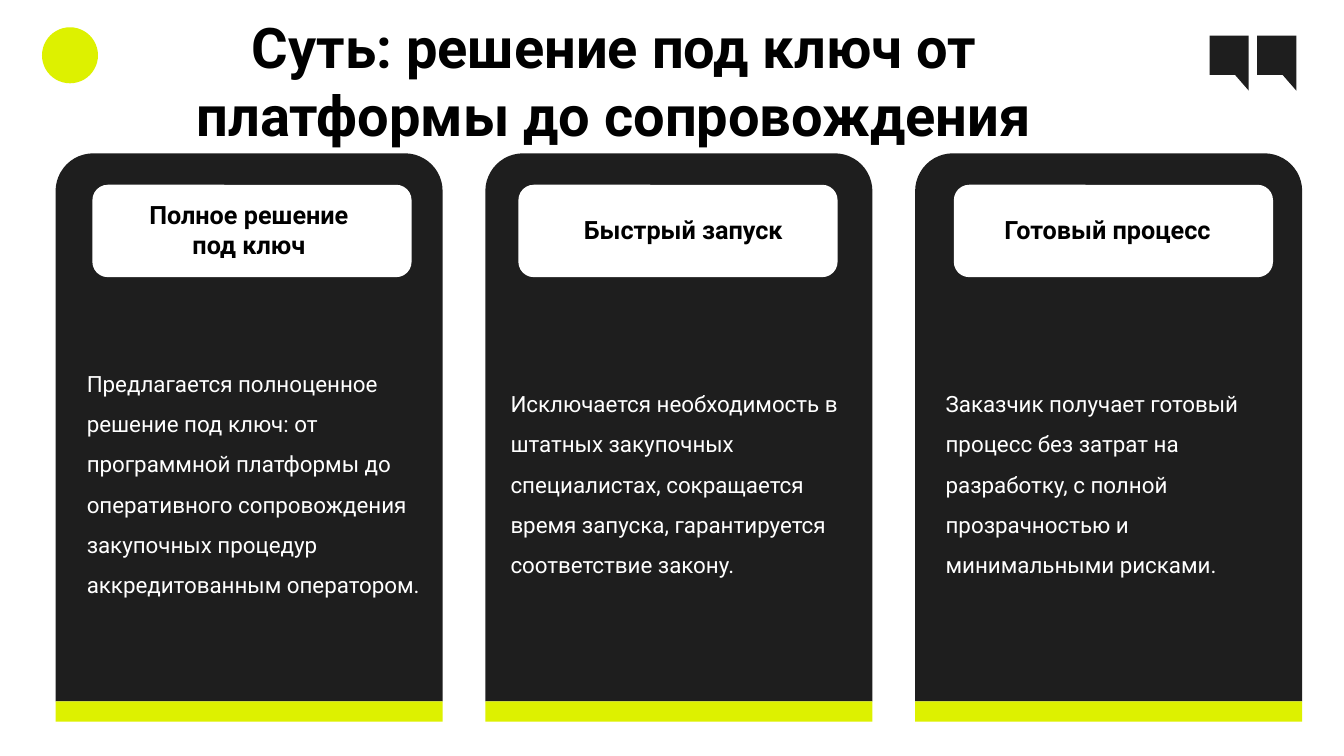
from dataclasses import dataclass

from pptx import Presentation
from pptx.dml.color import RGBColor
from pptx.enum.shapes import MSO_SHAPE
from pptx.enum.text import MSO_ANCHOR, MSO_AUTO_SIZE, PP_ALIGN
from pptx.util import Pt

OVAL = MSO_SHAPE.OVAL
RECT = MSO_SHAPE.RECTANGLE
ROUND = MSO_SHAPE.ROUNDED_RECTANGLE
DOME = MSO_SHAPE.ROUND_2_SAME_RECTANGLE
MIDDLE = MSO_ANCHOR.MIDDLE
GROW = MSO_AUTO_SIZE.SHAPE_TO_FIT_TEXT
LEFT = PP_ALIGN.LEFT
CENTER = PP_ALIGN.CENTER


@dataclass(frozen=True)
class Theme:
    font: str = "Roboto"
    lime: str = "DDF100"
    dark: str = "1E1E1E"
    white: str = "FFFFFF"
    black: str = "000000"
    title: int = 40
    label: int = 18
    body: int = 16


class Board:
    def __init__(self, slide, theme):
        self.slide = slide
        self.theme = theme

    def paint(self, shape, color):
        shape.shadow.inherit = False
        shape.fill.solid()
        shape.fill.fore_color.rgb = RGBColor.from_string(color)
        shape.line.fill.background()

    def block(self, kind, box, color, radius=None):
        shape = self.slide.shapes.add_shape(kind, *map(Pt, box))
        if radius is not None:
            shape.adjustments[0] = radius / min(box[2:])
        self.paint(shape, color)

    def quote(self, left, top):
        form = self.slide.shapes.build_freeform(Pt(left), Pt(top))
        corners = [(28, 0), (28, 39.2), (18.2, 28), (0, 28)]
        form.add_line_segments([(Pt(left + x), Pt(top + y)) for x, y in corners])
        self.paint(form.convert_to_shape(), self.theme.dark)

    def text(self, words, box, size, color, bold=False, align=CENTER, space=1.0):
        frame = self.slide.shapes.add_textbox(*map(Pt, box)).text_frame
        frame.word_wrap = True
        frame.auto_size = GROW
        frame.vertical_anchor = MIDDLE
        line = frame.paragraphs[0]
        line.alignment = align
        line.line_spacing = space
        run = line.add_run()
        run.text = words
        font = run.font
        font.name = self.theme.font
        font.size = Pt(size)
        font.bold = bold
        font.color.rgb = RGBColor.from_string(color)

    def card(self, left, tag_left, label_left, body_left, label, body):
        look = self.theme
        self.block(DOME, (left, 109.5, 276.5, 391.5), look.dark, 27)
        self.block(RECT, (left, 501, 276.5, 14.5), look.lime)
        self.block(ROUND, (tag_left, 132, 228, 66), look.white, 11)
        self.text(label, (label_left, 138.2, 172.8, 51), look.label, look.black, bold=True)
        self.text(body, (body_left, 222.5, 254.2, 237), look.body, look.white,
                  align=LEFT, space=1.5)


CARDS = [
    (66, 91.4, 54.9, "Полное решение под ключ",
     "Предлагается полноценное решение под ключ: от программной платформы "
     "до оперативного сопровождения закупочных процедур аккредитованным оператором."),
    (370.3, 401.8, 357.6, "Быстрый запуск",
     "Исключается необходимость в штатных закупочных специалистах, "
     "сокращается время запуска, гарантируется соответствие закону."),
    (681.3, 704.7, 668.4, "Готовый процесс",
     "Заказчик получает готовый процесс без затрат на разработку, "
     "с полной прозрачностью и минимальными рисками."),
]
FIRST, STEP = 39.7, 307


def main():
    deck = Presentation()
    deck.slide_width, deck.slide_height = Pt(960), Pt(540)
    theme = Theme()
    board = Board(deck.slides.add_slide(deck.slide_layouts[6]), theme)

    board.block(OVAL, (30, 19.5, 40, 40), theme.lime)
    for left in (864, 898):
        board.quote(left, 25.5)
    board.text("Суть: решение под ключ от платформы до сопровождения",
               (118.8, 5, 639.4, 104.4), theme.title, theme.black, bold=True)
    for i, parts in enumerate(CARDS):
        board.card(FIRST + i * STEP, *parts)

    deck.save("out.pptx")


if __name__ == "__main__":
    main()
